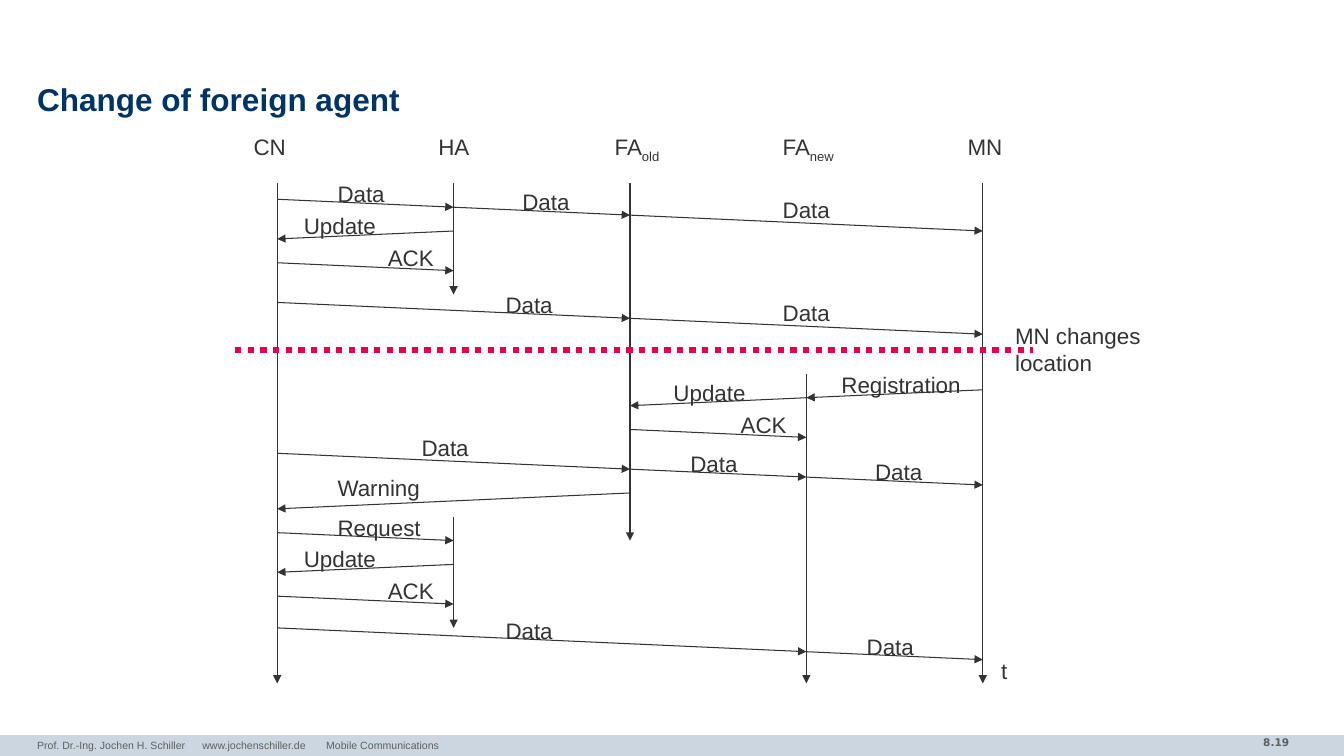
from dataclasses import dataclass

from lxml import etree
from pptx import Presentation
from pptx.dml.color import RGBColor
from pptx.enum.dml import MSO_LINE
from pptx.enum.shapes import MSO_CONNECTOR, MSO_SHAPE
from pptx.enum.text import MSO_ANCHOR, MSO_AUTO_SIZE, PP_ALIGN
from pptx.oxml.ns import qn
from pptx.util import Pt

STRAIGHT = MSO_CONNECTOR.STRAIGHT
RECT = MSO_SHAPE.RECTANGLE
DOTTED = MSO_LINE.ROUND_DOT
LEFT, RIGHT = PP_ALIGN.LEFT, PP_ALIGN.RIGHT
TOP, MIDDLE = MSO_ANCHOR.TOP, MSO_ANCHOR.MIDDLE
FIT = MSO_AUTO_SIZE.SHAPE_TO_FIT_TEXT


@dataclass(frozen=True)
class Theme:
    ink: str = "333333"
    title: str = "003366"
    muted: str = "5F5F5F"
    band: str = "CCD6E0"
    handover: str = "E8004D"
    font: str = "Arial"
    number_font: str = "DejaVu Sans"
    title_size: float = 22.5
    label_size: float = 16
    footer_size: float = 7.5
    thin: float = 0.75
    thick: float = 4.5


THEME = Theme()

# Diagram grid: one column per node, time counted downwards in ticks
FIRST_COLUMN, COLUMN_STEP = 198, 126
START, TICK = 131, 5.67
LABEL_HEIGHT = 26.5
CN, HA, FA_OLD, FA_NEW, MN = range(5)

# name, subscript, left, width
HEADINGS = [
    ("CN", "", 174, 37.5),
    ("HA", "", 306, 36.5),
    ("FA", "old", 432, 49.5),
    ("FA", "new", 552, 55.5),
    ("MN", "", 684, 39.5),
]

# node, first tick, last tick
LIFELINES = [
    (CN, 0, 63), (MN, 0, 63), (HA, 0, 14), (HA, 42, 53 + 3),
    (FA_OLD, 0, 45), (FA_NEW, 24, 63),
]

LABEL_WIDTHS = {"Data": 48.5, "Update": 66, "ACK": 47.5,
                "Registration": 100, "Warning": 74, "Request": 74}

# sender, receiver, tick sent, label, label left, label tick
MESSAGES = [
    (CN, HA, 2, "Data", 234, -1),
    (HA, FA_OLD, 3, "Data", 366, 0),
    (FA_OLD, MN, 4, "Data", 552, 1),
    (HA, CN, 6, "Update", 210, 3),
    (CN, HA, 10, "ACK", 270, 7),
    (CN, FA_OLD, 15, "Data", 354, 13),
    (FA_OLD, MN, 17, "Data", 552, 14),
    (MN, FA_NEW, 26, "Registration", 594, 23),
    (FA_NEW, FA_OLD, 27, "Update", 474, 24),
    (FA_OLD, FA_NEW, 31, "ACK", 522, 28),
    (CN, FA_OLD, 34, "Data", 294, 31),
    (FA_OLD, FA_NEW, 36, "Data", 486, 33),
    (FA_NEW, MN, 37, "Data", 618, 34),
    (FA_OLD, CN, 39, "Warning", 234, 36),
    (CN, HA, 44, "Request", 234, 41),
    (HA, CN, 48, "Update", 210, 45),
    (CN, HA, 52, "ACK", 270, 49),
    (CN, FA_NEW, 56, "Data", 354, 54),
    (FA_NEW, MN, 59, "Data", 612, 56),
]


def column_x(node):
    return FIRST_COLUMN + node * COLUMN_STEP


def tick_y(tick):
    return START + tick * TICK


def add_text(slide, text, x, y, w, h, *, sub="", size=THEME.label_size,
             color=THEME.ink, font=THEME.font, bold=False, align=LEFT,
             anchor=TOP, inset=(7.2, 3.6), wrap=True, spacing=None, tabs=()):
    sp = slide.shapes.add_textbox(Pt(x), Pt(y), Pt(w), Pt(h))
    tf = sp.text_frame
    tf.word_wrap = wrap
    if not wrap:
        tf.auto_size = FIT
    tf.vertical_anchor = anchor
    tf.margin_left = tf.margin_right = Pt(inset[0])
    tf.margin_top = tf.margin_bottom = Pt(inset[1])
    p = tf.paragraphs[0]
    p.alignment = align
    if spacing:
        p.line_spacing = spacing
    if tabs:
        tab_list = etree.SubElement(p._p.get_or_add_pPr(), qn("a:tabLst"))
        for stop in tabs:
            etree.SubElement(tab_list, qn("a:tab"), pos=str(Pt(stop)), algn="l")

    def add_run(part):
        r = p.add_run()
        r.text = part
        r.font.name, r.font.size, r.font.bold = font, Pt(size), bold
        r.font.color.rgb = RGBColor.from_string(color)
        return r

    for i, line in enumerate(text.split("\n")):
        if i:
            p.add_line_break()
        add_run(line)
    if sub:
        add_run(sub)._r.get_or_add_rPr().set("baseline", "-25000")


def add_label(slide, text, x, tick, width, height=LABEL_HEIGHT, sub=""):
    add_text(slide, text, x, tick_y(tick), width, height, sub=sub, wrap=False)


def add_line(slide, x1, y1, x2, y2, *, color=THEME.ink, width=THEME.thin,
             dash=None, arrow=True):
    line = slide.shapes.add_connector(STRAIGHT, Pt(x1), Pt(y1), Pt(x2), Pt(y2))
    line.line.color.rgb = RGBColor.from_string(color)
    line.line.width = Pt(width)
    if dash:
        line.line.dash_style = dash
    sp_pr = line._element.spPr
    if arrow:
        etree.SubElement(sp_pr.find(qn("a:ln")), qn("a:tailEnd"), type="triangle")
    etree.SubElement(sp_pr, qn("a:effectLst"))


def add_message(slide, sender, receiver, tick, label, x, label_tick):
    # Every message takes one tick per column it crosses
    arrival = tick + abs(receiver - sender)
    add_line(slide, column_x(sender), tick_y(tick),
             column_x(receiver), tick_y(arrival))
    add_label(slide, label, x, label_tick, LABEL_WIDTHS[label])


def add_frame(slide):
    band = slide.shapes.add_shape(RECT, 0, Pt(525), Pt(960), Pt(15))
    band.shadow.inherit = False
    band.fill.solid()
    band.fill.fore_color.rgb = RGBColor.from_string(THEME.band)
    band.line.fill.background()
    add_text(slide, "8.19", 799, 522, 129, 18.5, size=THEME.footer_size,
             color=THEME.muted, font=THEME.number_font, bold=True, align=RIGHT)
    add_text(slide, "Change of foreign agent", 26.5, 56, 907, 34,
             size=THEME.title_size, color=THEME.title, bold=True,
             anchor=MIDDLE, inset=(0, 0), spacing=0.85)
    add_text(slide, "Prof. Dr.-Ing. Jochen H. Schiller\twww.jochenschiller.de"
             "\tMobile Communications", 26.5, 524, 628, 16,
             size=THEME.footer_size, color=THEME.muted, inset=(0, 3.6),
             tabs=(118, 206.5))


def main():
    prs = Presentation()
    prs.slide_width, prs.slide_height = Pt(960), Pt(540)
    slide = prs.slides.add_slide(prs.slide_layouts[6])

    # Title, footer and page number
    add_frame(slide)

    # Nodes and their lifelines
    for name, sub, x, width in HEADINGS:
        add_label(slide, name, x, -6.9, width, sub=sub)
    for node, first, last in LIFELINES:
        add_line(slide, column_x(node), tick_y(first),
                 column_x(node), tick_y(last))
    add_label(slide, "t", 708, 59, 18.5)

    # Messages between the nodes
    for message in MESSAGES:
        add_message(slide, *message)

    # Moment of the location change
    add_line(slide, 168, tick_y(21), 738, tick_y(21), color=THEME.handover,
             width=THEME.thick, dash=DOTTED, arrow=False)
    add_label(slide, "MN changes\nlocation", 718, 16.9, 104.5, 46)

    prs.save("out.pptx")


if __name__ == "__main__":
    main()
